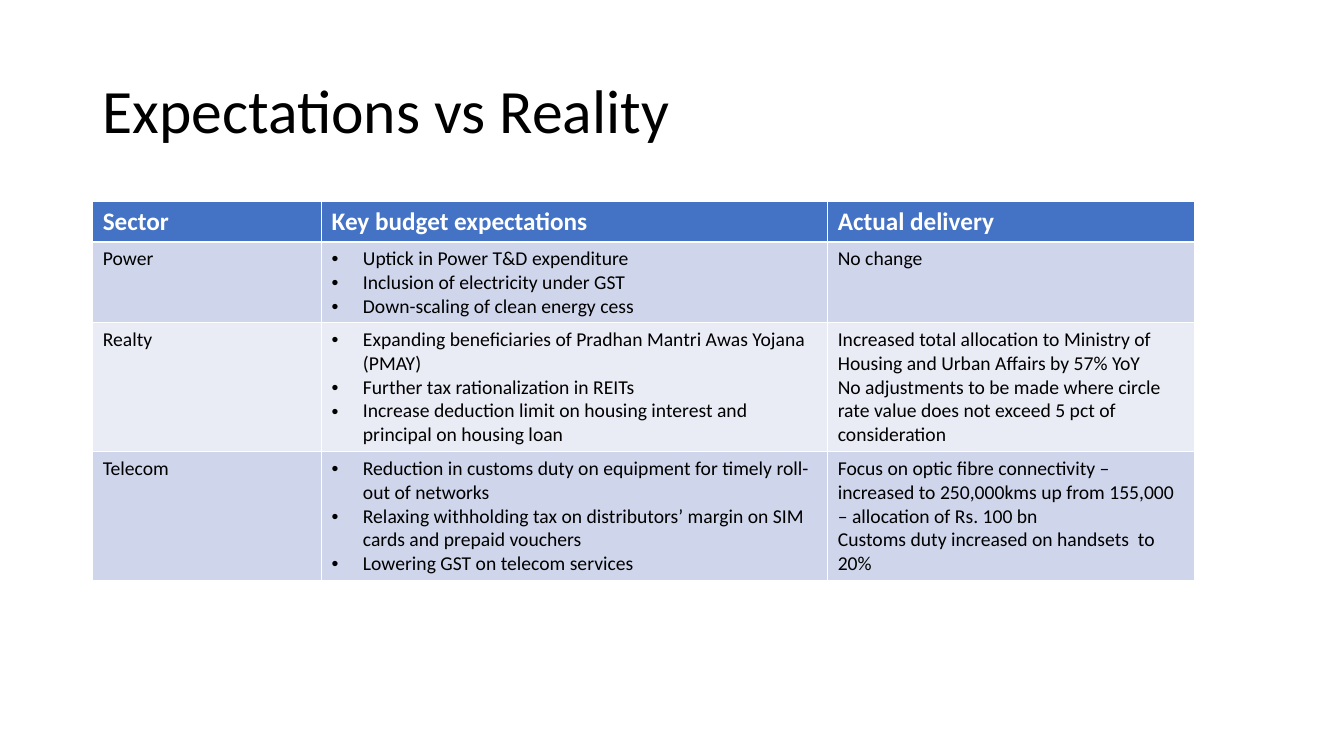
from dataclasses import dataclass

from lxml import etree
from pptx import Presentation
from pptx.dml.color import RGBColor
from pptx.enum.text import MSO_ANCHOR
from pptx.oxml.ns import qn
from pptx.util import Inches, Pt

MIDDLE = MSO_ANCHOR.MIDDLE


@dataclass(frozen=True)
class Theme:
    font: str = "Calibri"
    text: RGBColor = RGBColor(0x00, 0x00, 0x00)
    header_text: RGBColor = RGBColor(0xFF, 0xFF, 0xFF)
    header_fill: RGBColor = RGBColor(0x44, 0x72, 0xC4)
    band_fills: tuple = (RGBColor(0xCF, 0xD5, 0xEA), RGBColor(0xE9, 0xEB, 0xF5))
    title_size: int = 44
    header_size: int = 18
    body_size: int = 14
    bullet_indent: float = 0.31


class SlideBuilder:
    def __init__(self, slide, theme):
        self.slide = slide
        self.theme = theme

    def style(self, paragraph, size, color, bold=False):
        font = paragraph.font
        font.name = self.theme.font
        font.size = Pt(size)
        font.bold = bold
        font.color.rgb = color

    def add_bullet(self, paragraph):
        indent = Inches(self.theme.bullet_indent)
        properties = paragraph._p.get_or_add_pPr()
        properties.set("marL", str(indent))
        properties.set("indent", str(-indent))
        etree.SubElement(properties, qn("a:buFont")).set("typeface", "Arial")
        etree.SubElement(properties, qn("a:buChar")).set("char", "•")

    def add_title(self, text, left, top, width, height):
        box = self.slide.shapes.add_textbox(
            Inches(left), Inches(top), Inches(width), Inches(height))
        frame = box.text_frame
        frame.word_wrap = True
        frame.vertical_anchor = MIDDLE
        paragraph = frame.paragraphs[0]
        paragraph.text = text
        paragraph.line_spacing = 0.9
        self.style(paragraph, self.theme.title_size, self.theme.text)

    def fill_cell(self, cell, lines, fill, size, color, bold=False, bulleted=False):
        cell.fill.solid()
        cell.fill.fore_color.rgb = fill
        cell.text = "\n".join(lines)
        for paragraph in cell.text_frame.paragraphs:
            if bulleted:
                self.add_bullet(paragraph)
            self.style(paragraph, size, color, bold)

    def add_table(self, headers, rows, left, top, widths, heights, bullet_column):
        theme = self.theme
        # The default table style supplies the white rules between cells
        table = self.slide.shapes.add_table(
            len(heights), len(widths), Inches(left), Inches(top),
            Inches(sum(widths)), Inches(sum(heights))).table
        for column, width in zip(table.columns, widths):
            column.width = Inches(width)
        for row, height in zip(table.rows, heights):
            row.height = Inches(height)
        for column, header in enumerate(headers):
            self.fill_cell(table.cell(0, column), [header], theme.header_fill,
                           theme.header_size, theme.header_text, bold=True)
        for index, row in enumerate(rows):
            fill = theme.band_fills[index % len(theme.band_fills)]
            for column, lines in enumerate(row):
                self.fill_cell(table.cell(index + 1, column), lines, fill,
                               theme.body_size, theme.text,
                               bulleted=column == bullet_column)


HEADERS = ["Sector", "Key budget expectations", "Actual delivery"]
SECTORS = [
    (["Power"],
     ["Uptick in Power T&D expenditure",
      "Inclusion of electricity under GST",
      "Down-scaling of clean energy cess"],
     ["No change"]),
    (["Realty"],
     ["Expanding beneficiaries of Pradhan Mantri Awas Yojana (PMAY)",
      "Further tax rationalization in REITs",
      "Increase deduction limit on housing interest and principal on housing loan"],
     ["Increased total allocation to Ministry of Housing and Urban Affairs by 57% YoY",
      "No adjustments to be made where circle rate value does not exceed 5 pct of "
      "consideration"]),
    (["Telecom"],
     ["Reduction in customs duty on equipment for timely roll-out of networks",
      "Relaxing withholding tax on distributors’ margin on SIM cards and prepaid vouchers",
      "Lowering GST on telecom services"],
     ["Focus on optic fibre connectivity – increased to 250,000kms up from 155,000 "
      "– allocation of Rs. 100 bn",
      "Customs duty increased on handsets  to 20%"]),
]


def main():
    presentation = Presentation()
    presentation.slide_width = Inches(13.33)
    presentation.slide_height = Inches(7.5)
    slide = presentation.slides.add_slide(presentation.slide_layouts[6])
    builder = SlideBuilder(slide, Theme())

    # Title
    builder.add_title("Expectations vs Reality", 0.92, 0.4, 11.5, 1.45)

    # Sector comparison
    builder.add_table(HEADERS, SECTORS, left=0.92, top=2,
                      widths=[2.27, 5.02, 3.64], heights=[0.4, 0.8, 1.28, 1.28],
                      bullet_column=1)

    presentation.save("out.pptx")


if __name__ == "__main__":
    main()
